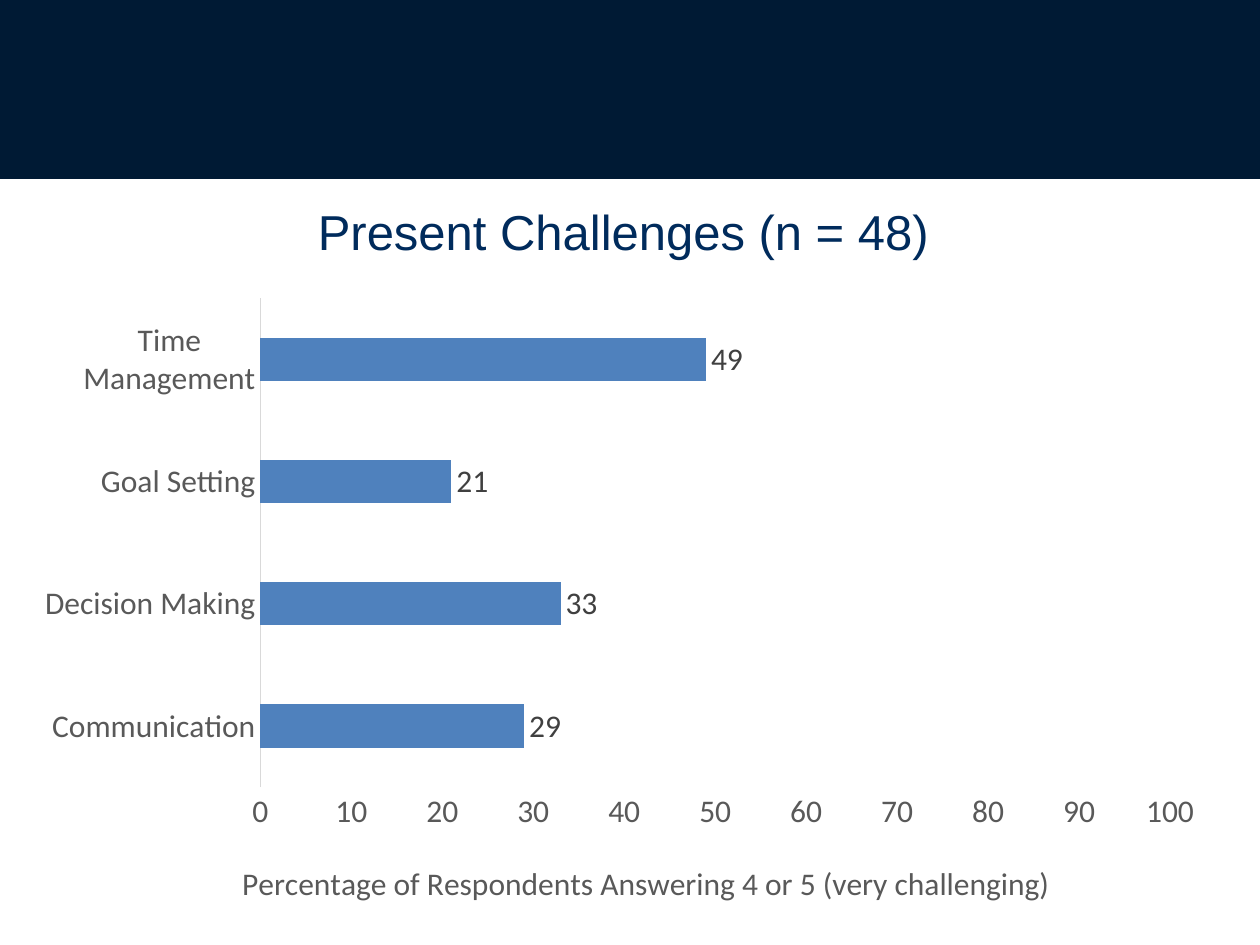
from lxml.etree import SubElement
from pptx import Presentation
from pptx.chart.data import CategoryChartData
from pptx.dml.color import RGBColor
from pptx.enum.chart import XL_CHART_TYPE, XL_LABEL_POSITION, XL_TICK_MARK
from pptx.enum.shapes import MSO_SHAPE
from pptx.enum.text import MSO_ANCHOR, PP_ALIGN
from pptx.oxml.ns import qn
from pptx.util import Emu, Pt

NAVY = RGBColor(0x00, 0x1A, 0x34)
TITLE_BLUE = RGBColor(0x00, 0x2B, 0x5C)
BAR_BLUE = RGBColor(0x4F, 0x81, 0xBD)
AXIS_GRAY = RGBColor(0x59, 0x59, 0x59)
LABEL_GRAY = RGBColor(0x40, 0x40, 0x40)
LINE_GRAY = RGBColor(0xD9, 0xD9, 0xD9)

CHALLENGES = {
    "Communication": 29,
    "Decision Making": 33,
    "Goal Setting": 21,
    "Time Management": 49,
}
AXIS_TITLE = "Percentage of Respondents Answering 4 or 5 (very challenging)"


def px(length):
    return Emu(round(length * 914400 / 126))


def style_font(font, name, size, color):
    font.name = name
    font.size = Pt(size)
    font.bold = False
    font.color.rgb = color


def add_banner(slide):
    banner = slide.shapes.add_shape(MSO_SHAPE.RECTANGLE, 0, 0, px(1260), px(179))
    banner.shadow.inherit = False
    banner.fill.solid()
    banner.fill.fore_color.rgb = NAVY
    banner.line.fill.background()


def add_title(slide, text):
    box = slide.shapes.add_textbox(px(63), px(189), px(1134), px(63))
    text_frame = box.text_frame
    text_frame.text = text
    text_frame.word_wrap = True
    text_frame.vertical_anchor = MSO_ANCHOR.TOP
    text_frame.margin_top = px(13)
    text_frame.margin_right = px(26)
    paragraph = text_frame.paragraphs[0]
    paragraph.alignment = PP_ALIGN.CENTER
    style_font(paragraph.runs[0].font, "Arial", 28, TITLE_BLUE)


def set_layout(element, position, **settings):
    """Place a chart part by hand, in fractions of the chart area."""
    for old_layout in element.findall(qn("c:layout")):
        element.remove(old_layout)
    layout = SubElement(element, qn("c:layout"))
    manual = SubElement(layout, qn("c:manualLayout"))
    for tag, value in settings.items():
        SubElement(manual, qn(f"c:{tag}")).set("val", str(value))
    element.insert(position, layout)


def style_axis(axis):
    axis.has_major_gridlines = False
    axis.major_tick_mark = XL_TICK_MARK.NONE
    axis.minor_tick_mark = XL_TICK_MARK.NONE
    style_font(axis.tick_labels.font, "Calibri", 18, AXIS_GRAY)


def style_value_axis(axis):
    style_axis(axis)
    axis.minimum_scale = 0
    axis.maximum_scale = 100
    axis.major_unit = 10
    axis.tick_labels.number_format = "0"
    axis.tick_labels.number_format_is_linked = False
    axis.format.line.fill.background()
    text_frame = axis.axis_title.text_frame
    text_frame.text = AXIS_TITLE
    style_font(text_frame.paragraphs[0].runs[0].font, "Calibri", 18, AXIS_GRAY)
    set_layout(axis.axis_title._element, 1,
               xMode="edge", yMode="edge", x=0.18, y=0.91)


def style_bars(plot):
    plot.gap_width = 182
    plot.vary_by_categories = False
    fill = plot.series[0].format.fill
    fill.solid()
    fill.fore_color.rgb = BAR_BLUE
    plot.has_data_labels = True
    labels = plot.data_labels
    labels.show_value = True
    labels.number_format = "0"
    labels.number_format_is_linked = False
    labels.position = XL_LABEL_POSITION.OUTSIDE_END
    style_font(labels.font, "Calibri", 18, LABEL_GRAY)


def add_challenge_chart(slide):
    chart_data = CategoryChartData(number_format="0")
    chart_data.categories = list(CHALLENGES)
    chart_data.add_series("Series 1", list(CHALLENGES.values()))
    chart = slide.shapes.add_chart(XL_CHART_TYPE.BAR_CLUSTERED, px(21), px(286),
                                   px(1197), px(627), chart_data).chart
    chart.has_title = False
    chart.has_legend = False
    chart.font.name = "Calibri"
    chart.font.size = Pt(10)

    style_axis(chart.category_axis)
    category_line = chart.category_axis.format.line
    category_line.color.rgb = LINE_GRAY
    category_line.width = Pt(0.75)
    style_value_axis(chart.value_axis)
    style_bars(chart.plots[0])
    set_layout(chart._chartSpace.chart.plotArea, 0,
               layoutTarget="inner", xMode="edge", yMode="edge",
               x=0.2, y=0.02, w=0.76, h=0.78)


def main():
    presentation = Presentation()
    presentation.slide_width = px(1260)
    presentation.slide_height = px(945)
    slide = presentation.slides.add_slide(presentation.slide_layouts[6])

    # Header
    add_banner(slide)
    add_title(slide, "Present Challenges (n = 48)")

    # Survey results
    add_challenge_chart(slide)

    presentation.save("out.pptx")


if __name__ == "__main__":
    main()
